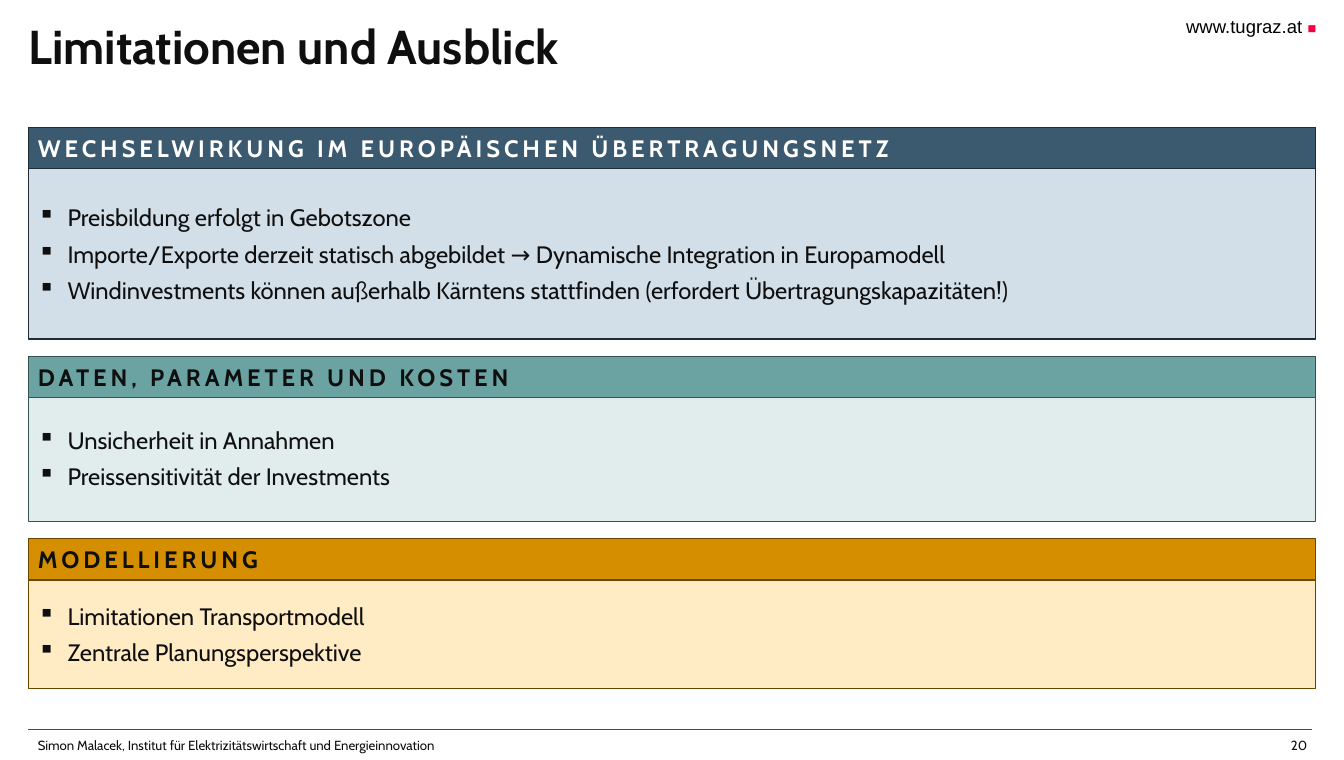
import pptx
import pptx.util
import pptx.dml.color
import pptx.enum.shapes
import pptx.enum.text
import lxml.etree

Pt = pptx.util.Pt
ALIGN = pptx.enum.text.PP_ALIGN
ANCHOR = pptx.enum.text.MSO_ANCHOR
KIND = pptx.enum.shapes.MSO_SHAPE
INK = "0F0F0F"
LEFT, WIDE = 21.6, 975.6


def color(code):
    return pptx.dml.color.RGBColor.from_string(code)


def write(shape, lines, ink=INK, align=ALIGN.LEFT, anchor=ANCHOR.MIDDLE,
          inset=None, bullet=False, track=0, **style):
    """Fill a shape with paragraphs; each line is a list of runs (text, changes)."""
    frame = shape.text_frame
    frame.word_wrap = True
    frame.vertical_anchor = anchor
    if inset is not None:
        for side in ("left", "right", "top", "bottom"):
            setattr(frame, "margin_" + side, Pt(inset))
    for i, line in enumerate(lines):
        para = frame.paragraphs[0] if i == 0 else frame.add_paragraph()
        para.alignment = align
        if i:
            para.space_before = Pt(6)
        if bullet:
            props = para._p.get_or_add_pPr()
            props.set("marL", str(Pt(22.5)))
            props.set("indent", str(-Pt(22.5)))
            mark = lxml.etree.SubElement(props, pptx.oxml.ns.qn("a:buChar"))
            mark.set("char", "▪")
        for text, change in line:
            run = para.add_run()
            run.text = text
            look = {"name": "Cabin", "size": 18, "ink": ink, **style, **change}
            run.font.color.rgb = color(look.pop("ink"))
            look["size"] = Pt(look["size"])
            for key, value in look.items():
                setattr(run.font, key, value)
            if track:
                run._r.get_or_add_rPr().set("spc", str(track * 100))


deck = pptx.Presentation()
deck.slide_width, deck.slide_height = Pt(1018.8), Pt(576)
slide = deck.slides.add_slide(deck.slide_layouts[6])
shapes = slide.shapes

# Title, web address and footer
labels = [
    ((836.6, 7.9, 161.3, 24.5),
     [("www.tugraz.at ", {}), ("■", {"size": 11, "ink": "F70146"})],
     {"name": "Arial", "size": 14, "ink": "000000", "align": ALIGN.RIGHT, "inset": 0}),
    ((LEFT, 13, WIDE, 42.5), [("Limitationen und Ausblick", {})],
     {"size": 36, "bold": True, "anchor": ANCHOR.TOP, "inset": 0}),
    ((LEFT, 553, 904.3, 23),
     [("Simon Malacek, Institut für Elektrizitätswirtschaft und Energieinnovation", {})],
     {"size": 10}),
    ((958.3, 553, 39.6, 23), [("20", {})], {"size": 10, "align": ALIGN.RIGHT}),
]
for box, runs, style in labels:
    write(shapes.add_textbox(*map(Pt, box)), [runs], **style)

rule = shapes.add_connector(pptx.enum.shapes.MSO_CONNECTOR.STRAIGHT,
                            Pt(LEFT), Pt(553), Pt(994.3), Pt(553))
rule.line.color.rgb = color("4B4B4B")
rule.line.width = Pt(1)
lxml.etree.SubElement(rule._element.spPr, pptx.oxml.ns.qn("a:effectLst"))

# Panels: head, head top, body top, body height, head fill, body fill, edge, head ink
panels = [
    ("WECHSELWIRKUNG IM EUROPÄISCHEN ÜBERTRAGUNGSNETZ", 96.4, 127.4, 129.6,
     "3B5A70", "D3DFE8", "1E2D38", "FFFFFF",
     ["Preisbildung erfolgt in Gebotszone",
      "Importe/Exporte derzeit statisch abgebildet → Dynamische Integration in Europamodell",
      "Windinvestments können außerhalb Kärntens stattfinden "
      "(erfordert Übertragungskapazitäten!)"]),
    ("DATEN, PARAMETER UND KOSTEN", 270, 298.8, 96.4,
     "6BA3A3", "E1EDED", "345353", INK,
     ["Unsicherheit in Annahmen", "Preissensitivität der Investments"]),
    ("MODELLIERUNG", 408.2, 439.2, 82.8,
     "D58E00", "FFEBC4", "6A4700", INK,
     ["Limitationen Transportmodell", "Zentrale Planungsperspektive"]),
]
for head, top, start, height, dark, light, edge, ink, points in panels:
    parts = [
        (start, height, light, points, {"bullet": True}),
        (top, 31.4, dark, [head], {"ink": ink, "bold": True, "track": 3}),
    ]
    for y, tall, fill, texts, style in parts:
        bar = shapes.add_shape(KIND.RECTANGLE, Pt(LEFT), Pt(y), Pt(WIDE), Pt(tall))
        bar.shadow.inherit = False
        bar.fill.solid()
        bar.fill.fore_color.rgb = color(fill)
        bar.line.color.rgb = color(edge)
        bar.line.width = Pt(1)
        write(bar, [[(text, {})] for text in texts], **style)

deck.save("out.pptx")
